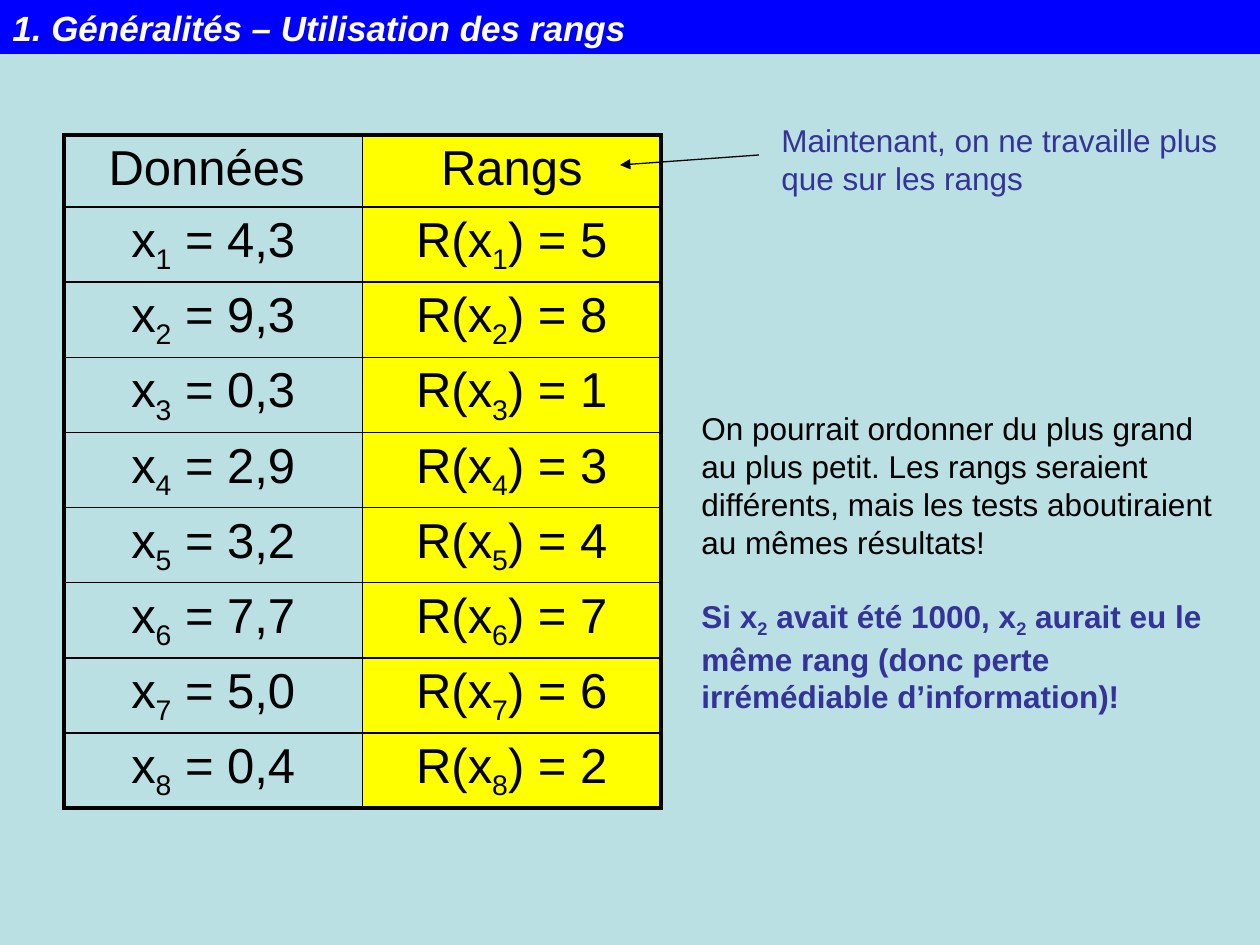
"""Build a slide on replacing data values by their ranks."""
import pptx
import pptx.dml.color
import pptx.enum.shapes
import pptx.enum.text
import pptx.oxml
import pptx.oxml.ns
import pptx.util

RGB = pptx.dml.color.RGBColor
BLACK = RGB(0x00, 0x00, 0x00)
WHITE = RGB(0xFF, 0xFF, 0xFF)
BLUE = RGB(0x00, 0x00, 0xFF)
INDIGO = RGB(0x33, 0x33, 0x99)
YELLOW = RGB(0xFF, 0xFF, 0x00)
PALE = RGB(0xBB, 0xE0, 0xE3)
VALUES = ["4,3", "9,3", "0,3", "2,9", "3,2", "7,7", "5,0", "0,4"]
RANKS = [5, 8, 1, 3, 4, 7, 6, 2]
CENTER = pptx.enum.text.PP_ALIGN.CENTER
LEFT = pptx.enum.text.PP_ALIGN.LEFT


def px(n):
    """Turn pixels into EMU."""
    return pptx.util.Emu(round(n * 914400 / 126))


def xml(tag, body="", attrs=""):
    """Return a DrawingML element."""
    ns = pptx.oxml.ns.nsdecls("a")
    return pptx.oxml.parse_xml(f"<a:{tag} {ns} {attrs}>{body}</a:{tag}>")


def write(p, text, size, color, bold=False, italic=False, align=LEFT):
    """Fill a paragraph, setting parts between underscores as subscripts."""
    p.alignment = align
    p.font.name = "Arial"
    p.font.size = pptx.util.Pt(size)
    p.font.color.rgb = color
    p.font.bold, p.font.italic = bold, italic
    for i, part in enumerate(text.split("_")):
        r = p.add_run()
        r.text = part
        if i % 2:
            r._r.get_or_add_rPr().set("baseline", "-25000")


def add_title(s, x, y, w, h):
    """Add the title bar."""
    sp = s.shapes.add_shape(pptx.enum.shapes.MSO_SHAPE.RECTANGLE, px(x), px(y), px(w), px(h))
    sp.shadow.inherit = False
    sp.fill.solid()
    sp.fill.fore_color.rgb = BLUE
    sp.line.fill.background()
    tf = sp.text_frame
    tf.word_wrap = True
    tf.vertical_anchor = pptx.enum.text.MSO_ANCHOR.TOP
    tf.auto_size = pptx.enum.text.MSO_AUTO_SIZE.SHAPE_TO_FIT_TEXT
    write(tf.paragraphs[0], "1. Généralités – Utilisation des rangs", 20, WHITE, True, True)


def set_borders(cell, outer):
    """Draw cell borders, thicker on the outer edges of the table."""
    tcPr = cell._tc.get_or_add_tcPr()
    for side in "LRTB":
        width = pptx.util.Pt(2.25 if side in outer else 1)
        fill = f'<a:solidFill><a:srgbClr val="{BLACK}"/></a:solidFill>'
        tcPr.append(xml(f"ln{side}", fill, f'w="{width}"'))


def add_table(s, x, y, w, h):
    """Add the table of values and ranks."""
    rows = [("Données ", "Rangs")]
    for i, (value, rank) in enumerate(zip(VALUES, RANKS), 1):
        rows.append((f"x_{i}_ = {value}", f"R(x_{i}_) = {rank}"))
    table = s.shapes.add_table(len(rows), 2, px(x), px(y), px(w), px(h)).table
    table.first_row = table.horz_banding = False
    for i, texts in enumerate(rows):
        table.rows[i].height = px(h / len(rows))
        for j, text in enumerate(texts):
            cell = table.cell(i, j)
            edges = "LR"[j] + ("T" if i == 0 else "B" if i == len(rows) - 1 else "")
            set_borders(cell, edges)
            if j:
                cell.fill.solid()
                cell.fill.fore_color.rgb = YELLOW
            else:
                cell.fill.background()
            write(cell.text_frame.paragraphs[0], text, 28, BLACK, align=CENTER)


def add_text(s, x, y, w, h, wrap, gap, paragraphs):
    """Add a text box with a gap in points between its paragraphs."""
    tf = s.shapes.add_textbox(px(x), px(y), px(w), px(h)).text_frame
    tf.word_wrap = wrap
    tf.auto_size = pptx.enum.text.MSO_AUTO_SIZE.SHAPE_TO_FIT_TEXT
    for i, (text, color, bold) in enumerate(paragraphs):
        p = tf.add_paragraph() if i else tf.paragraphs[0]
        write(p, text, 18, color, bold)
        if i and gap:
            p.space_before = pptx.util.Pt(gap)


def add_arrow(s, x1, y1, x2, y2):
    """Add an arrow that ends at the second point."""
    kind = pptx.enum.shapes.MSO_CONNECTOR.STRAIGHT
    sp = s.shapes.add_connector(kind, px(x1), px(y1), px(x2), px(y2))
    sp.line.color.rgb = BLACK
    sp.line.width = pptx.util.Pt(0.75)
    sp.line._get_or_add_ln().append(xml("tailEnd", attrs='type="triangle"'))
    sp._element.spPr.append(xml("effectLst"))


def main():
    """Build and save the slide."""
    prs = pptx.Presentation()
    prs.slide_width, prs.slide_height = px(1260), px(945)
    s = prs.slides.add_slide(prs.slide_layouts[6])
    s.background.fill.solid()
    s.background.fill.fore_color.rgb = PALE
    add_table(s, 64, 135, 597, 648)
    add_text(s, 689, 403, 538, 315, True, 20.7, [
        ("On pourrait ordonner du plus grand au plus petit. Les rangs seraient "
         "différents, mais les tests aboutiraient au mêmes résultats!", BLACK, False),
        ("Si x_2_ avait été 1000, x_2_ aurait eu le même rang "
         "(donc perte irrémédiable d’information)!", INDIGO, True)])
    add_arrow(s, 759, 155, 620, 165)
    add_text(s, 769, 115, 470, 88, False, 0, [
        ("Maintenant, on ne travaille plus", INDIGO, False),
        ("que sur les rangs", INDIGO, False)])
    add_title(s, 0, 0, 1260, 54)
    prs.save("out.pptx")


if __name__ == "__main__":
    main()
